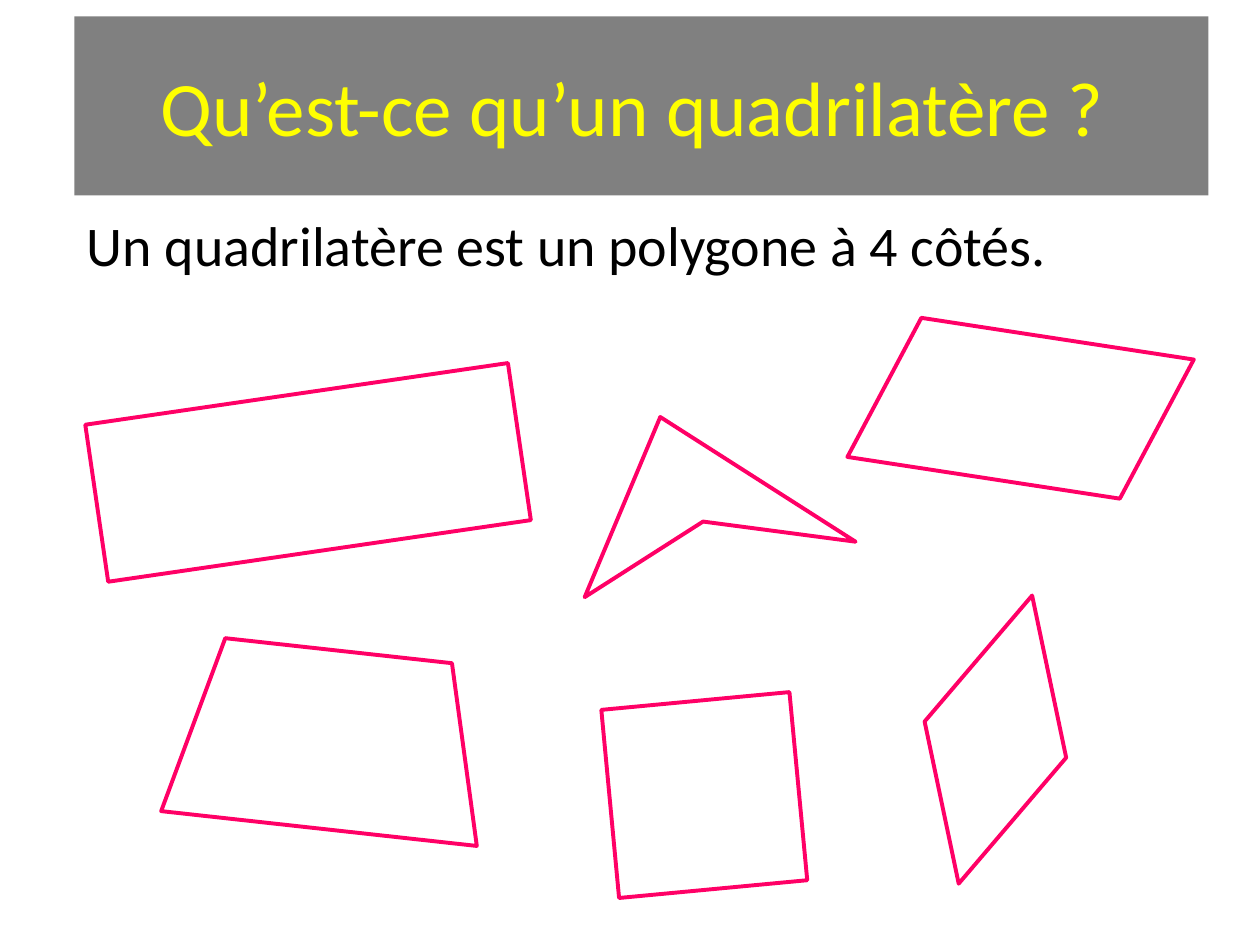
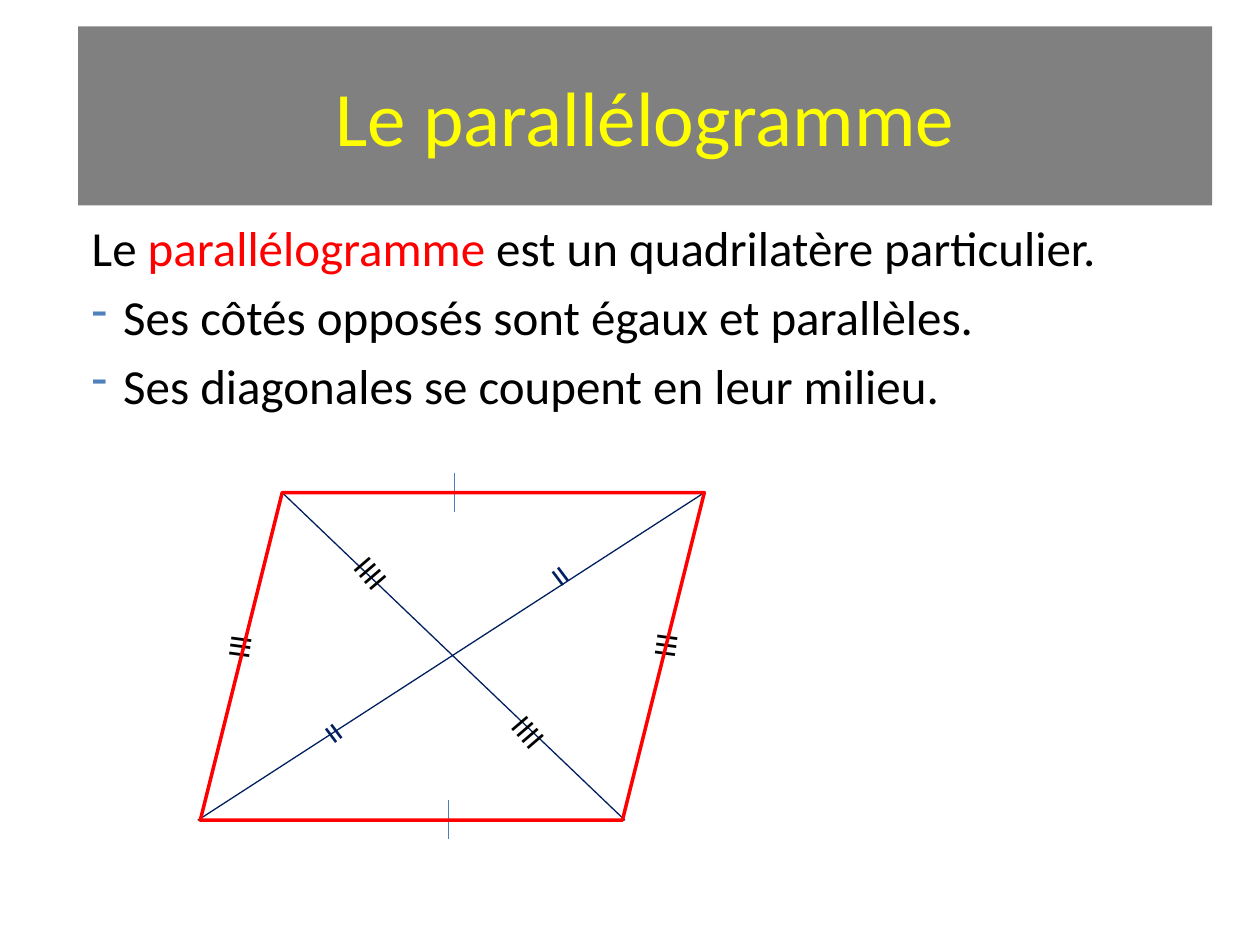
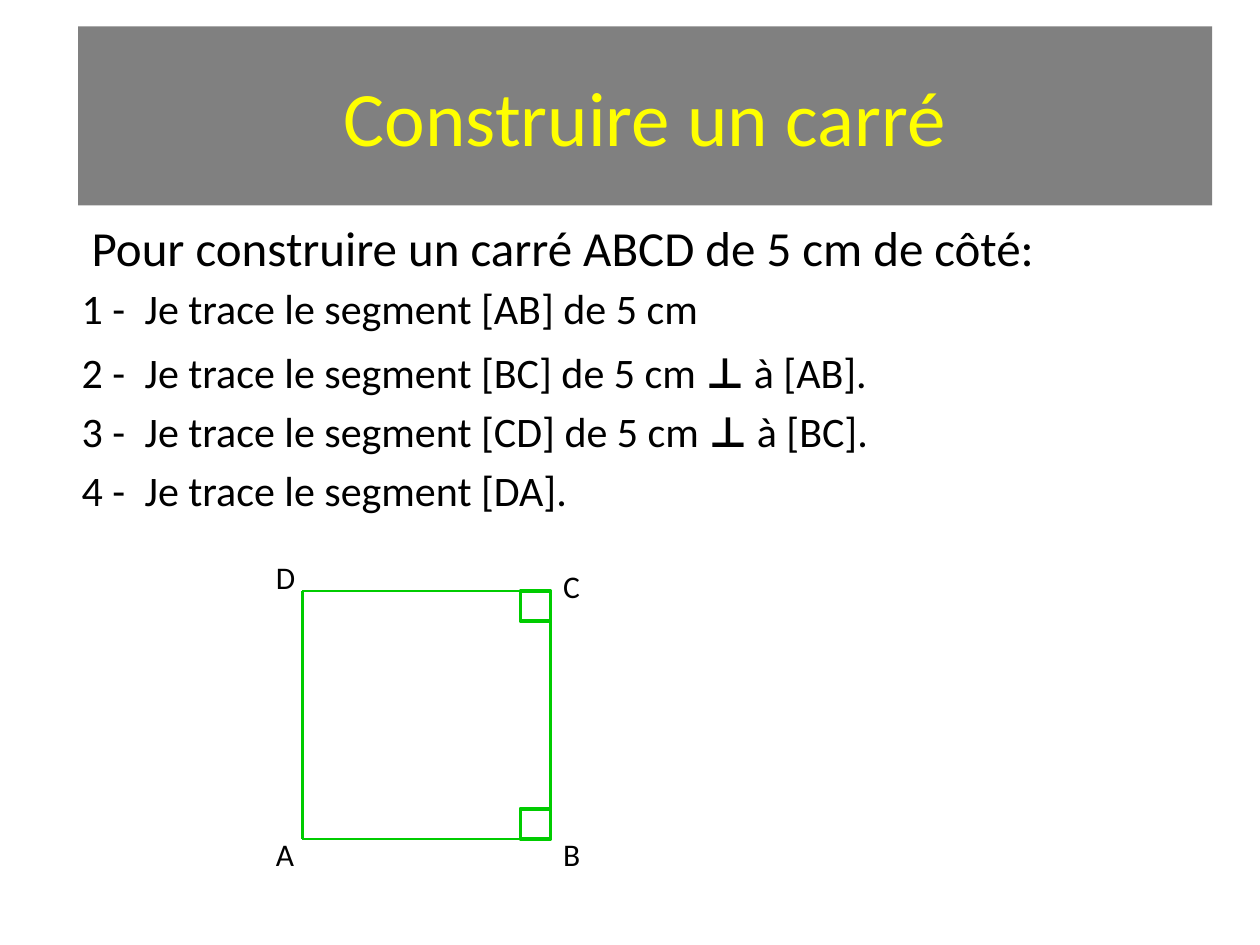
from lxml.etree import SubElement
from pptx import Presentation
from pptx.dml.color import RGBColor
from pptx.enum.shapes import MSO_CONNECTOR, MSO_SHAPE
from pptx.enum.text import MSO_ANCHOR, PP_ALIGN
from pptx.oxml.ns import qn
from pptx.util import Inches, Pt

BLACK, WHITE, RED, NAVY = "000000", "FFFFFF", "FF0000", "002060"
BAND, TITLE, PINK, GREEN = "808080", "FFFF00", "FF0066", "00CC00"
TICK, BULLET = "4B7EBC", "4F81BD"
FONT = "Calibri"


def color(hex_string):
    return RGBColor.from_string(hex_string)


def inches(*lengths):
    return [Inches(length) for length in lengths]


class Lesson:
    def __init__(self):
        self.deck = Presentation()
        self.deck.slide_width, self.deck.slide_height = inches(10, 7.5)
        self.page = None

    def new_page(self, title, left=0.62, top=0.21):
        self.page = self.deck.slides.add_slide(self.deck.slide_layouts[6])
        band = self.shape(MSO_SHAPE.RECTANGLE, (left, top, 9, 1.42), fill=BAND)
        frame = band.text_frame
        frame.word_wrap = True
        frame.vertical_anchor = MSO_ANCHOR.MIDDLE
        self.fill_paragraph(frame.paragraphs[0], [title], 44, TITLE, PP_ALIGN.CENTER)

    def fill_paragraph(self, para, spans, size, ink, align):
        """Fill a paragraph; a span is a string or (string, colour, bold)."""
        para.alignment = align
        for span in spans:
            words, span_ink, bold = (span, ink, False) if isinstance(span, str) else span
            run = para.add_run()
            run.text = words
            run.font.name = FONT
            run.font.size = Pt(size)
            run.font.bold = bold
            run.font.color.rgb = color(span_ink)

    def text(self, at, *lines, size, ink=BLACK, align=PP_ALIGN.JUSTIFY, space=0, rotation=0):
        """Add a text box; each line is a list of spans."""
        box = self.page.shapes.add_textbox(*inches(*at))
        box.rotation = rotation
        frame = box.text_frame
        frame.word_wrap = True
        for index, spans in enumerate(lines):
            para = frame.add_paragraph() if index else frame.paragraphs[0]
            para.space_before = Pt(space)
            self.fill_paragraph(para, spans, size, ink, align)
        return box

    def label(self, at, words, size=18, ink=BLACK, rotation=0):
        self.text(at, [words], size=size, ink=ink, align=PP_ALIGN.LEFT, rotation=rotation)

    def hang(self, para, indent):
        properties = para._p.get_or_add_pPr()
        properties.set("marL", str(Inches(indent)))
        properties.set("indent", str(-Inches(indent)))
        return properties

    def dash(self, para):
        properties = self.hang(para, 0.25)
        tint = SubElement(properties, qn("a:buClr"))
        SubElement(tint, qn("a:srgbClr"), val=BULLET)
        SubElement(properties, qn("a:buSzPct"), val="95000")
        SubElement(properties, qn("a:buChar"), char="-")

    def paint(self, shape, fill, line, width):
        shape.shadow.inherit = False
        if fill:
            shape.fill.solid()
            shape.fill.fore_color.rgb = color(fill)
        else:
            shape.fill.background()
        if line:
            shape.line.color.rgb = color(line)
            shape.line.width = Pt(width)
        else:
            shape.line.fill.background()

    def shape(self, kind, at, fill=None, line=None, width=2.25, rotation=0):
        shape = self.page.shapes.add_shape(kind, *inches(*at))
        shape.rotation = rotation
        self.paint(shape, fill, line, width)
        return shape

    def polygon(self, points, fill, line, width=2.25):
        start, *others = [inches(*point) for point in points]
        builder = self.page.shapes.build_freeform(*start, scale=1)
        builder.add_line_segments(others, close=True)
        self.paint(builder.convert_to_shape(), fill, line, width)

    def line(self, start, end, ink, width=0.75):
        line = self.page.shapes.add_connector(
            MSO_CONNECTOR.STRAIGHT, *inches(*start), *inches(*end))
        line.line.color.rgb = color(ink)
        line.line.width = Pt(width)
        SubElement(line._element.spPr, qn("a:effectLst"))


def quadrilaterals(lesson):
    lesson.new_page("Qu’est-ce qu’un quadrilatère ? ", 0.59, 0.13)
    lesson.text((0.59, 1.62, 8.98, 0.64),
                ["Un quadrilatère est un polygone à 4 côtés."], size=32)
    for kind, at, rotation in [
        (MSO_SHAPE.RECTANGLE, (0.75, 3.12, 3.39, 1.26), 351.7),
        (MSO_SHAPE.DIAMOND, (7.32, 4.69, 1.16, 2.36), 14.3),
        (MSO_SHAPE.TRAPEZOID, (1.35, 5.16, 2.52, 1.42), 6.3),
        (MSO_SHAPE.PARALLELOGRAM, (6.8, 2.65, 2.6, 1.18), 8.7),
        (MSO_SHAPE.RECTANGLE, (4.84, 5.56, 1.5, 1.5), 354.6),
    ]:
        figure = lesson.shape(kind, at, WHITE, PINK, rotation=rotation)
        if kind == MSO_SHAPE.PARALLELOGRAM:
            figure.adjustments[0] = 0.35
    lesson.polygon([(4.64, 4.74), (5.24, 3.31), (6.79, 4.3), (5.58, 4.14)], WHITE, PINK)


def parallelogram(lesson):
    lesson.new_page("Le parallélogramme")
    properties = lesson.text(
        (0.63, 1.68, 8.94, 1.6),
        ["Le ", ("parallélogramme", RED, False), " est un quadrilatère particulier."],
        ["Ses côtés opposés sont égaux et parallèles."],
        ["Ses diagonales se coupent en leur milieu."],
        size=28, space=5.6)
    for para in properties.text_frame.paragraphs[1:]:
        lesson.dash(para)

    for x, top in [(3.61, 3.75), (3.56, 6.35)]:
        lesson.line((x, top), (x, top + 0.31), TICK)
    for start, end in [((2.24, 3.91), (4.96, 6.51)), ((5.59, 3.91), (1.57, 6.51))]:
        lesson.line(start, end, NAVY)
    for left, top in [(4.3, 4.29), (2.5, 5.54)]:
        lesson.label((left, top, 0.31, 0.5), "=", 24, NAVY, 53.1)
    for left, top in [(5.02, 5.01), (1.64, 5.02)]:
        lesson.label((left, top, 0.55, 0.4), "III", rotation=97.7)
    lesson.shape(MSO_SHAPE.PARALLELOGRAM, (1.59, 3.91, 4, 2.6), line=RED, width=2)
    for left, top in [(3.96, 5.64), (2.71, 4.38)]:
        lesson.label((left, top, 0.55, 0.4), "IIII", rotation=49.3)


def square(lesson):
    lesson.new_page("Construire un carré")
    lesson.text((0.63, 1.68, 8.94, 0.53),
                ["Pour construire un carré ABCD de 5 cm de côté:"], size=28, space=5.6)
    perpendicular = ("⊥ ", BLACK, True)
    steps = [
        (2.19, ["[AB] de 5 cm"]),
        (2.7, ["[BC] de 5 cm ", perpendicular, "à [AB]."]),
        (3.17, ["[CD] de 5 cm ", perpendicular, "à [BC]."]),
        (3.64, ["[DA]."]),
    ]
    for number, (top, spans) in enumerate(steps, 1):
        step = lesson.text((0.55, top, 8.94, 0.5),
                           [f"{number} -\tJe trace le segment {spans[0]}", *spans[1:]], size=24)
        lesson.hang(step.text_frame.paragraphs[0], 0.5)

    left, top, right, bottom = 2.4, 4.69, 4.37, 6.66
    corners = [(left, bottom), (right, bottom), (right, top), (left, top)]
    for start, end in zip(corners, corners[1:] + corners[:1]):
        lesson.line(start, end, GREEN, 1.5)
    mark = 0.24
    for mark_top in (top, bottom - mark):
        lesson.shape(MSO_SHAPE.RECTANGLE, (right - mark, mark_top, mark, mark),
                     WHITE, GREEN, 2)
    for name, x, y in [("A", 2.09, 6.58), ("B", 4.37, 6.58), ("C", 4.37, 4.45), ("D", 2.09, 4.38)]:
        lesson.label((x, y, 0.39, 0.4), name)


def main():
    lesson = Lesson()
    for build in (quadrilaterals, parallelogram, square):
        build(lesson)
    lesson.deck.save("out.pptx")


if __name__ == "__main__":
    main()
